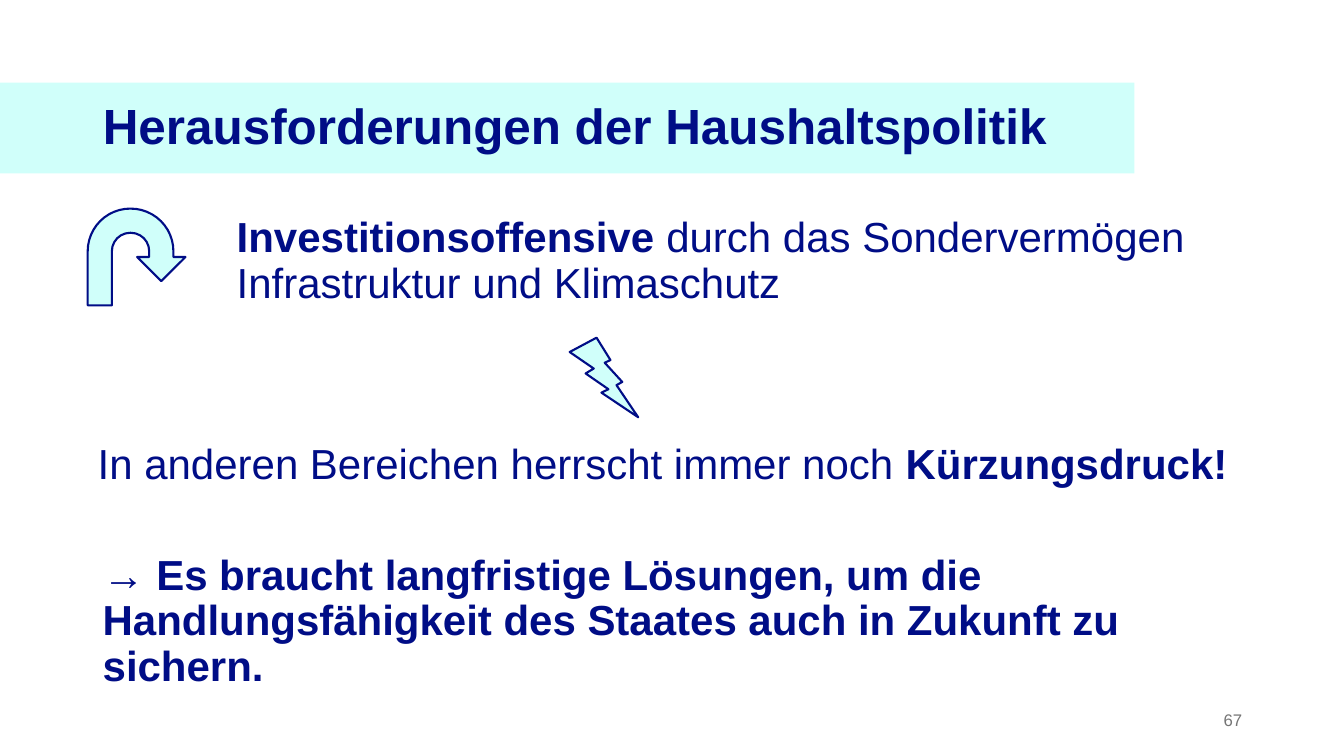
from pptx import Presentation
from pptx.dml.color import RGBColor
from pptx.enum.shapes import MSO_SHAPE
from pptx.enum.text import MSO_ANCHOR, MSO_AUTO_SIZE, PP_ALIGN
from pptx.util import Inches, Pt

RECTANGLE = MSO_SHAPE.RECTANGLE
U_TURN_ARROW = MSO_SHAPE.U_TURN_ARROW
LIGHTNING_BOLT = MSO_SHAPE.LIGHTNING_BOLT
TOP, MIDDLE = MSO_ANCHOR.TOP, MSO_ANCHOR.MIDDLE
LEFT, RIGHT = PP_ALIGN.LEFT, PP_ALIGN.RIGHT
NO_AUTOFIT = MSO_AUTO_SIZE.NONE
NAVY, MINT, GREY = "000D86", "D0FFFA", "757575"
BODY_SIZE = 30


def color(hex_value):
    """Turn a hex string into a colour."""
    return RGBColor.from_string(hex_value)


def set_values(target, values):
    """Set each named attribute of the target."""
    for name, value in values.items():
        setattr(target, name, value)


def write_text(shape, runs, size=BODY_SIZE, hex_value=NAVY, anchor=TOP, alignment=LEFT):
    """Fill a shape with one paragraph of (text, bold) runs."""
    frame = shape.text_frame
    set_values(frame, {
        "word_wrap": True, "auto_size": NO_AUTOFIT, "vertical_anchor": anchor,
        "margin_left": Inches(0.1), "margin_right": Inches(0.1),
        "margin_top": Inches(0.05), "margin_bottom": Inches(0.05),
    })
    paragraph = frame.paragraphs[0]
    set_values(paragraph, {"alignment": alignment, "line_spacing": 0.9, "space_before": Pt(0)})
    for text, bold in runs:
        run = paragraph.add_run()
        run.text = text
        set_values(run.font, {"name": "Arial", "size": Pt(size), "bold": bold})
        run.font.color.rgb = color(hex_value)


def add_text(slide, box, runs, **text_format):
    """Add a text box at the given left, top, width and height."""
    shape = slide.shapes.add_textbox(*map(Inches, box))
    write_text(shape, runs, **text_format)


def add_mint_shape(slide, kind, box, outlined=True, adjustments=()):
    """Add a mint preset shape, with a navy outline if wanted."""
    shape = slide.shapes.add_shape(kind, *map(Inches, box))
    shape.shadow.inherit = False
    shape.fill.solid()
    shape.fill.fore_color.rgb = color(MINT)
    if outlined:
        shape.line.color.rgb = color(NAVY)
        shape.line.width = Pt(1.5)
    else:
        shape.line.fill.background()
    for index, value in enumerate(adjustments):
        shape.adjustments[index] = value


def place_title(slide, box, text):
    """Place and format the title in front of the shapes added so far."""
    title = slide.shapes.title
    set_values(title, dict(zip(("left", "top", "width", "height"), map(Inches, box))))
    write_text(title, [(text, True)], size=35.3, anchor=MIDDLE)
    title.element.getparent().append(title.element)


def main():
    """Build and save the slide."""
    presentation = Presentation()
    presentation.slide_width = Inches(13.33)
    presentation.slide_height = Inches(7.5)
    slide = presentation.slides.add_slide(presentation.slide_layouts[5])

    add_mint_shape(slide, RECTANGLE, (0, 0.82, 11.25, 0.9), outlined=False)
    place_title(slide, (0.92, 0.82, 10.77, 0.9), "Herausforderungen der Haushaltspolitik")

    add_mint_shape(slide, U_TURN_ARROW, (0.87, 2.07, 0.97, 0.96),
                   adjustments=(0.25, 0.25, 0.25, 0.44, 0.75))
    add_text(slide, (2.25, 2.1, 10.2, 0.53), [
        ("Investitionsoffensive ", True),
        ("durch das Sondervermögen Infrastruktur und Klimaschutz", False),
    ])
    add_mint_shape(slide, LIGHTNING_BOLT, (5.65, 3.35, 0.68, 0.79))
    add_text(slide, (0.87, 4.35, 11.59, 0.53), [
        ("In anderen Bereichen herrscht immer noch ", False),
        ("Kürzungsdruck!", True),
    ])
    add_text(slide, (0.92, 5.45, 11.04, 1.47), [
        ("→ Es braucht langfristige Lösungen, um die Handlungsfähigkeit "
         "des Staates auch in Zukunft zu sichern.", True),
    ])
    add_text(slide, (9.42, 6.95, 3, 0.4), [("67", False)],
             size=12, hex_value=GREY, anchor=MIDDLE, alignment=RIGHT)

    presentation.save("out.pptx")


if __name__ == "__main__":
    main()
